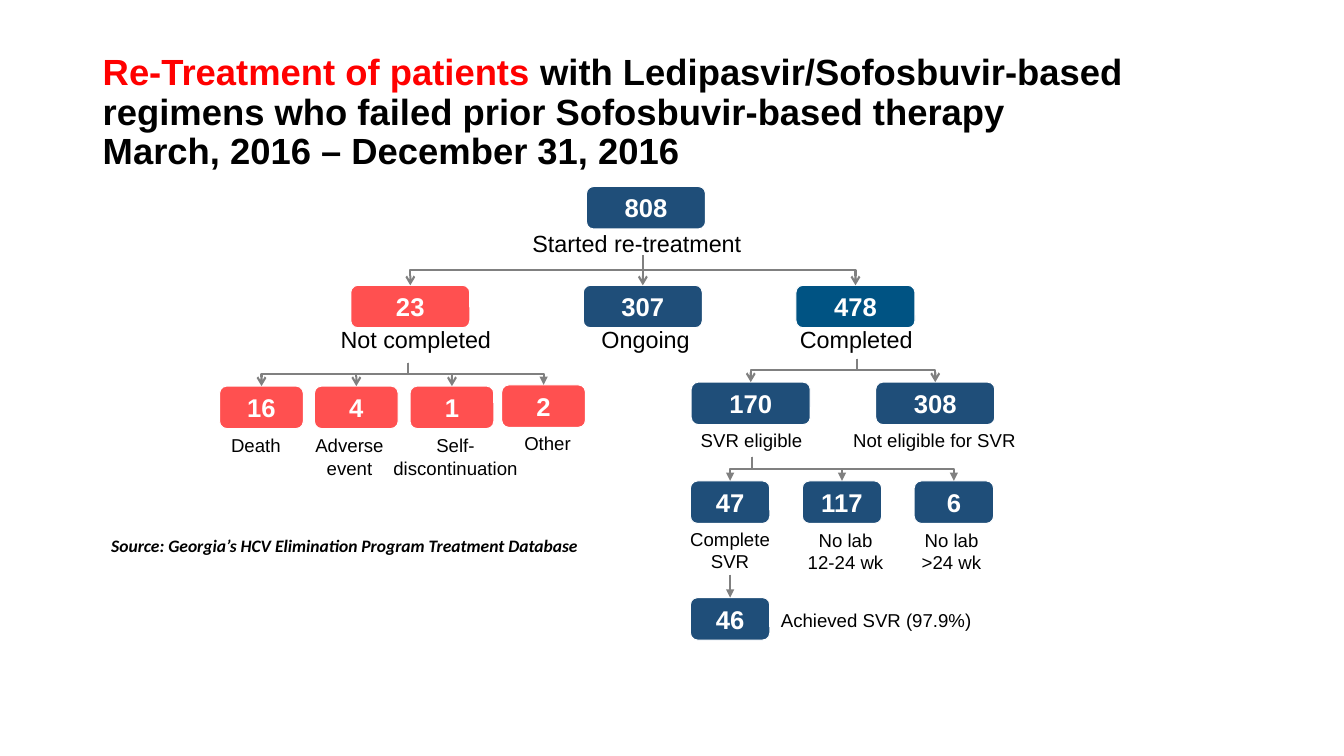
from pptx import Presentation
from pptx.dml.color import RGBColor
from pptx.enum.shapes import MSO_CONNECTOR as Link, MSO_SHAPE as Shape
from pptx.enum.text import MSO_ANCHOR as Anchor, PP_ALIGN as Align
from pptx.oxml.ns import qn
from pptx.util import Cm, Pt
from lxml.etree import SubElement

NAVY = RGBColor(0x1F, 0x4E, 0x79)
BLUE = RGBColor(0x00, 0x53, 0x83)
CORAL = RGBColor(0xFF, 0x50, 0x50)
RED = RGBColor(0xFF, 0x00, 0x00)
GREY = RGBColor(0x80, 0x80, 0x80)
WHITE = RGBColor(0xFF, 0xFF, 0xFF)
BLACK = RGBColor(0x00, 0x00, 0x00)

TITLE_LEAD = "Re-Treatment of patients"
TITLE = (" with Ledipasvir/Sofosbuvir-based regimens who failed prior "
         "Sofosbuvir-based therapy\nMarch, 2016 – December 31, 2016")
SOURCE = "Source: Georgia’s HCV Elimination Program Treatment Database"

WIDE, MEDIUM, SMALL, BOX_HEIGHT = 3.0, 2.11, 2.0, 1.07
LARGE_TEXT, SMALL_TEXT = 16.7, 13.3
SVR_LEFT, SVR_STEP = 18.4, 2.82

# value: (centre, top, width, fill, label, label centre, label top, label width, label size)
PATIENTS = {
    "808": (16.28, 4.7, WIDE, NAVY, "Started re-treatment", 16.05, 5.66, 6.17, LARGE_TEXT),
    "23": (10.34, 7.19, WIDE, CORAL, "Not completed", 10.48, 8.08, 4.5, LARGE_TEXT),
    "307": (16.2, 7.19, WIDE, NAVY, "Ongoing", 16.27, 8.08, 4.34, LARGE_TEXT),
    "478": (21.56, 7.19, WIDE, BLUE, "Completed", 21.58, 8.08, 4.34, LARGE_TEXT),
    "16": (6.59, 9.73, MEDIUM, CORAL, "Death", 6.45, 10.82, 2.29, SMALL_TEXT),
    "4": (8.98, 9.73, MEDIUM, CORAL, "Adverse\nevent", 8.81, 10.82, 2.64, SMALL_TEXT),
    "1": (11.39, 9.73, MEDIUM, CORAL, "Self-\ndiscontinuation", 11.48, 10.82, 4.39, SMALL_TEXT),
    "2": (13.7, 9.7, MEDIUM, CORAL, "Other", 13.8, 10.77, 2.31, SMALL_TEXT),
    "170": (18.92, 9.63, WIDE, NAVY, "SVR eligible", 18.94, 10.69, 4.14, SMALL_TEXT),
    "308": (23.57, 9.63, WIDE, NAVY, "Not eligible for SVR", 23.55, 10.69, 5.94, SMALL_TEXT),
    "47": (SVR_LEFT, 12.12, SMALL, NAVY, "Complete\nSVR", 18.4, 13.18, 2.54, SMALL_TEXT),
    "117": (SVR_LEFT + SVR_STEP, 12.12, SMALL, NAVY, "No lab\n12-24 wk", 21.31, 13.2, 2.54, SMALL_TEXT),
    "6": (SVR_LEFT + 2 * SVR_STEP, 12.12, SMALL, NAVY, "No lab\n>24 wk", 23.98, 13.2, 2.54, SMALL_TEXT),
    "46": (SVR_LEFT, 15.06, SMALL, NAVY, "Achieved SVR (97.9%)", 22.43, 15.21, 6.0, SMALL_TEXT),
}
BRANCHES = [
    (16.2, 6.43, "arrow", ["478", "23", "307"]),
    (21.59, 9.04, "arrow", ["308", "170"]),
    (10.29, 9.14, "arrow", ["1", "16", "4"]),
    (10.29, 9.14, "triangle", ["2"]),
    (18.95, 11.51, "triangle", ["47", "117", "6"]),
    (SVR_LEFT, 14.48, "triangle", ["46"]),
]

deck = Presentation()
deck.slide_width, deck.slide_height = Cm(33.87), Cm(19.05)
slide = deck.slides.add_slide(deck.slide_layouts[6])


def write(frame, text, *, size, colour=BLACK, font="Arial", bold=False, italic=False,
          align=Align.CENTER, anchor=Anchor.TOP, spacing=None, lead="", lead_colour=RED):
    frame.word_wrap = True
    frame.vertical_anchor = anchor
    for row, line in enumerate(text.split("\n")):
        paragraph = frame.add_paragraph() if row else frame.paragraphs[0]
        paragraph.alignment = align
        paragraph.line_spacing = spacing
        opening = [(lead, lead_colour)] if lead and not row else []
        for words, ink in opening + [(line, colour)]:
            run = paragraph.add_run()
            run.text = words
            run.font.name, run.font.size = font, Pt(size)
            run.font.bold, run.font.italic = bold, italic
            run.font.color.rgb = ink


def text_area(left, top, width, height):
    return slide.shapes.add_textbox(Cm(left), Cm(top), Cm(width), Cm(height)).text_frame


def count_box(value, centre, top, width, fill):
    box = slide.shapes.add_shape(Shape.ROUNDED_RECTANGLE, Cm(centre - width / 2), Cm(top),
                                 Cm(width), Cm(BOX_HEIGHT))
    box.shadow.inherit = False
    box.fill.solid()
    box.fill.fore_color.rgb = fill
    box.line.color.rgb = WHITE
    box.line.width = Pt(0.75)
    write(box.text_frame, value, size=18.3, colour=WHITE, bold=True, anchor=Anchor.MIDDLE)
    return box


def branch(x, y, value, head):
    end_x, end_y = PATIENTS[value][:2]
    across, down = abs(end_x - x), end_y - y
    if across == 0:
        arrow = slide.shapes.add_connector(Link.STRAIGHT, Cm(x), Cm(y), Cm(end_x), Cm(end_y))
        arrow.end_connect(boxes[value], 0)
    else:
        mid_x, mid_y = (x + end_x) / 2, (y + end_y) / 2
        arrow = slide.shapes.add_connector(
            Link.ELBOW, Cm(mid_x - down / 2), Cm(mid_y - across / 2),
            Cm(mid_x + down / 2), Cm(mid_y + across / 2))
        frame = arrow._element.spPr.find(qn("a:xfrm"))
        frame.set("rot", "16200000" if end_x > x else "5400000")
        if end_x > x:
            frame.set("flipH", "1")
    arrow.line.color.rgb = GREY
    arrow.line.width = Pt(1.5)
    SubElement(arrow.line._get_or_add_ln(), qn("a:tailEnd"), type=head)
    SubElement(arrow._element.spPr, qn("a:effectLst"))


write(text_area(2.34, 1.02, 29.21, 3.68), TITLE, size=26, bold=True, align=Align.LEFT,
      anchor=Anchor.MIDDLE, spacing=0.9, lead=TITLE_LEAD)

boxes = {}
for value, (centre, top, width, fill, label, label_centre, label_top, label_width, size) in PATIENTS.items():
    boxes[value] = count_box(value, centre, top, width, fill)
    label_height = 0.25 + 0.04 * size * len(label.split("\n"))
    write(text_area(label_centre - label_width / 2, label_top, label_width, label_height), label,
          size=size, align=Align.LEFT if value == "46" else Align.CENTER)

for x, y, head, values in BRANCHES:
    for value in values:
        branch(x, y, value, head)

write(text_area(2.34, 13.36, 12.47, 0.79), SOURCE, size=12.5, font="Calibri", bold=True,
      italic=True, align=Align.RIGHT)

deck.save("out.pptx")
